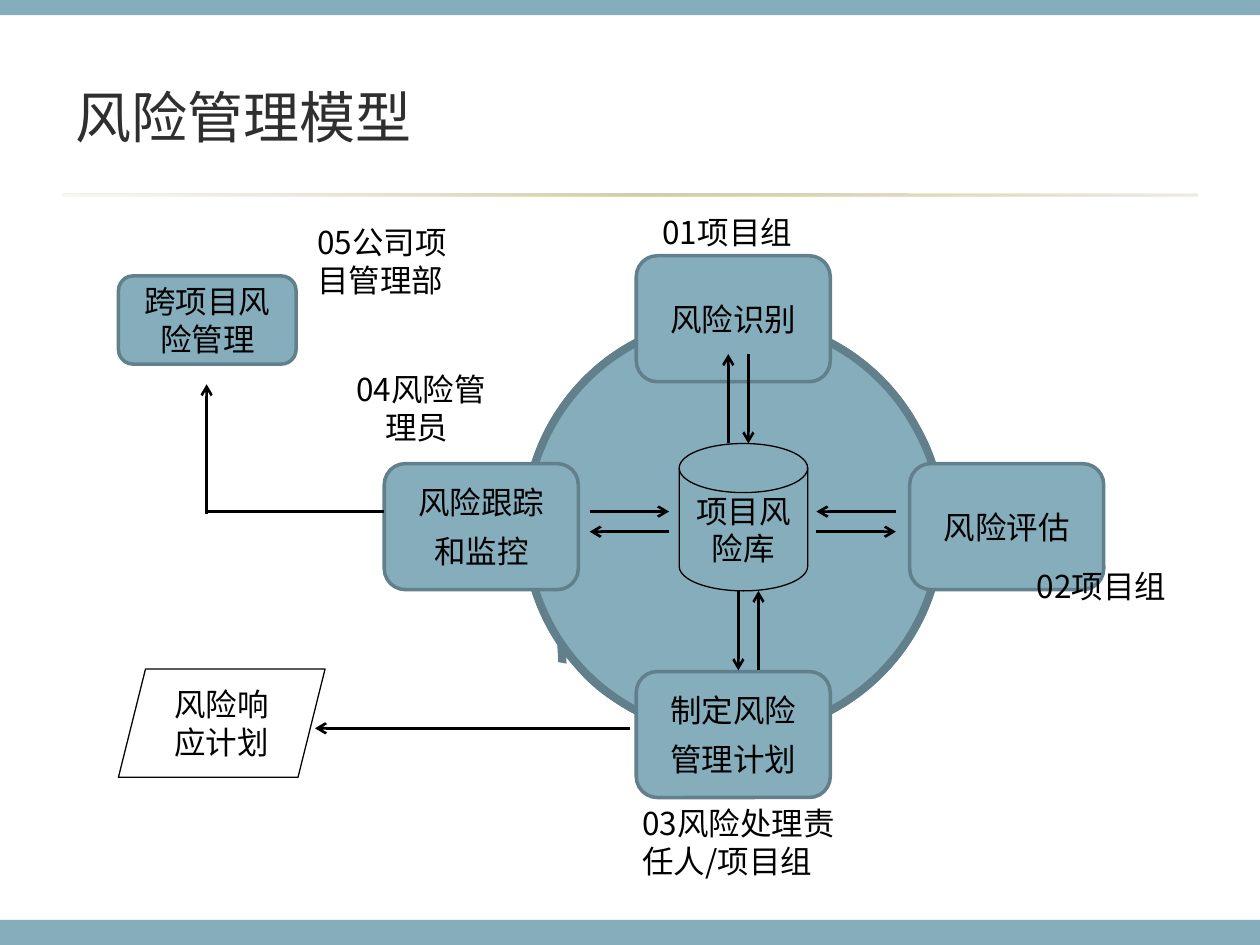
from dataclasses import dataclass

from lxml import etree
from pptx import Presentation
from pptx.dml.color import RGBColor
from pptx.enum.shapes import MSO_CONNECTOR, MSO_SHAPE
from pptx.enum.text import MSO_ANCHOR, MSO_AUTO_SIZE, PP_ALIGN
from pptx.oxml import parse_xml
from pptx.oxml.ns import nsdecls, qn
from pptx.util import Inches, Pt

RECT, ROUND, ARC = MSO_SHAPE.RECTANGLE, MSO_SHAPE.ROUNDED_RECTANGLE, MSO_SHAPE.ARC
DISK, SLANT = MSO_SHAPE.FLOWCHART_MAGNETIC_DISK, MSO_SHAPE.PARALLELOGRAM
STRAIGHT = MSO_CONNECTOR.STRAIGHT
MIDDLE, TOP = MSO_ANCHOR.MIDDLE, MSO_ANCHOR.TOP
LEFT, CENTER = PP_ALIGN.LEFT, PP_ALIGN.CENTER
GROW, FIXED = MSO_AUTO_SIZE.SHAPE_TO_FIT_TEXT, MSO_AUTO_SIZE.NONE

COLORS = {"teal": "85ADBC", "edge": "62808B", "ink": "000000", "title": "2F2F2F"}
SANS, LATIN = "Noto Sans CJK SC", "Roboto"
INSETS = ("margin_left", "margin_top", "margin_right", "margin_bottom")
TIGHT = {name: Inches(0.07) for name in INSETS}


@dataclass
class Node:
    kind: int
    box: tuple
    text: str
    fill: str | None = "teal"
    edge: str = "edge"
    width: float = 2
    font: str = SANS


@dataclass
class Label:
    box: tuple
    text: str
    indent: float = 0  # left indent of the last paragraph


@dataclass
class Arrow:
    start: tuple
    end: tuple
    head: bool = True


def color(name: str) -> RGBColor:
    return RGBColor.from_string(COLORS[name])


def add_head(item) -> None:
    line = item.element.spPr.find(qn("a:ln"))
    etree.SubElement(line, qn("a:tailEnd"), type="arrow")


def write(frame, text: str, font: str = SANS, size: float = 18, ink: str = "ink",
          align=LEFT, after: float = 0, **style) -> None:
    for name, value in {"word_wrap": True, **style}.items():
        setattr(frame, name, value)
    frame.text = text
    for para in frame.paragraphs:
        para.alignment = align
        if after:
            para.space_after = Pt(after)
        run = para.runs[0]
        for name, value in {"name": font, "size": Pt(size)}.items():
            setattr(run.font, name, value)
        run.font.color.rgb = color(ink)
        etree.SubElement(run.font._element, qn("a:ea"), typeface=SANS)


def add_shape(slide, kind, box: tuple, fill: str | None = "teal",
              edge: str | None = None, width: float = 0):
    shape = slide.shapes.add_shape(kind, *map(Inches, box))
    shape.shadow.inherit = False
    if fill:
        shape.fill.solid()
        shape.fill.fore_color.rgb = color(fill)
    else:
        shape.fill.background()
    if edge:
        shape.line.color.rgb = color(edge)
        shape.line.width = Pt(width)
    else:
        shape.line.fill.background()
    return shape


def add_node(slide, node: Node) -> None:
    shape = add_shape(slide, node.kind, node.box, node.fill, node.edge, node.width)
    style = {"vertical_anchor": MIDDLE}
    if node.font == LATIN:
        style |= {"after": 6.3, **TIGHT}
    write(shape.text_frame, node.text, node.font, align=CENTER, **style)


def add_wedge(slide, box: tuple, start: float, end: float) -> None:
    shape = add_shape(slide, ARC, box, "teal", "edge", 4.5)
    for i, angle in enumerate((start, end)):
        shape.adjustments[i] = angle * 0.6 ** -1  # 60000 units a degree
    add_head(shape)


def add_label(slide, label: Label) -> None:
    frame = slide.shapes.add_textbox(*map(Inches, label.box)).text_frame
    write(frame, label.text, auto_size=GROW, vertical_anchor=TOP)
    if label.indent:
        props = frame.paragraphs[-1]._p.get_or_add_pPr()
        props.set("marL", str(Inches(label.indent)))


def add_arrow(slide, arrow: Arrow) -> None:
    line = slide.shapes.add_connector(
        STRAIGHT, *map(Inches, (*arrow.start, *arrow.end)))
    line.line.color.rgb = color("ink")
    line.line.width = Pt(1.5)
    etree.SubElement(line.element.spPr, qn("a:effectLst"))
    if arrow.head:
        add_head(line)


def add_rule(slide, box: tuple, stops: list) -> None:
    rule = add_shape(slide, RECT, box)
    marks = "".join(
        f'<a:gs pos="{pos * 1000}"><a:srgbClr val="{tint}">'
        f'<a:alpha val="{alpha * 1000}"/></a:srgbClr></a:gs>'
        for pos, tint, alpha in stops)
    props = rule.element.spPr
    props.replace(props.find(qn("a:solidFill")), parse_xml(
        f'<a:gradFill {nsdecls("a")}><a:gsLst>{marks}</a:gsLst>'
        '<a:lin ang="0" scaled="0"/></a:gradFill>'))


# Stages around the wheel
WIDE, HIGH = 1.54, 1
STAGES = [(5.05, 2.03, "风险识别"), (7.22, 3.68, "风险评估"),
          (5.05, 5.33, "制定风险\n管理计划"), (3.05, 3.68, "风险跟踪\n和监控")]
WHEEL = (4.17, 2.53, 3.3, 3.3)
WEDGES = [(306.7, 333.45), (26.55, 53.3), (126.7, 153.45), (206.55, 233.3)]

NODES = [Node(ROUND, (x, y, WIDE, HIGH), text, font=LATIN) for x, y, text in STAGES]
NODES += [
    Node(DISK, (5.39, 3.52, 1.02, 1.17), "项目风险库", None, "ink", 0.75),
    Node(ROUND, (0.94, 2.19, 1.41, 0.7), "跨项目风险管理"),
    Node(SLANT, (0.94, 5.31, 1.64, 0.86), "风险响应计划", None, "ink", 0.75),
]
LABELS = [
    Label((5.16, 1.64, 1.41, 0.4), "01项目组"),
    Label((8.13, 4.45, 1.41, 0.4), "02项目组"),
    Label((5, 6.33, 1.88, 0.71), "03风险处理责任人/项目组"),
    Label((2.73, 2.89, 1.41, 0.71), "04风险管\n理员", 0.23),
    Label((2.42, 1.72, 1.33, 0.71), "05公司项目管理部"),
]
ARROWS = [
    Arrow((3.05, 4.06), (1.64, 4.06), False),
    Arrow((1.64, 4.08), (1.64, 3.05)),
    Arrow((5, 5.78), (2.5, 5.78)),
]
# Two-way pairs: vertical (up x, down x, top, bottom), horizontal (left y, right y, ends)
for up, down, top, foot in [(5.78, 5.94, 2.81, 3.52), (6.02, 5.86, 4.69, 5.32)]:
    ARROWS += [Arrow((up, foot), (up, top)), Arrow((down, top), (down, foot))]
for back, forth, near, far in [(4.22, 4.06, 4.68, 5.31), (4.06, 4.22, 6.48, 7.11)]:
    ARROWS += [Arrow((far, back), (near, back)), Arrow((near, forth), (far, forth))]


def main() -> None:
    deck = Presentation()
    deck.slide_width, deck.slide_height = Inches(10), Inches(7.5)
    slide = deck.slides.add_slide(deck.slide_layouts[5])

    # Title
    title = slide.shapes.title
    frame = {"left": 0.5, "top": 0.3, "width": 9, "height": 1.25}
    for name, value in frame.items():
        setattr(title, name, Inches(value))
    write(title.text_frame, "风险管理模型", size=32, ink="title",
          vertical_anchor=MIDDLE, auto_size=FIXED)

    # Page bands and rule
    for box in [(0, 7.3, 10, 0.2), (0, 0, 10, 0.12)]:
        add_shape(slide, RECT, box)
    add_rule(slide, (0.5, 1.54, 9, 0.02),
             [(0, "DCD9CC", 20), (50, "918415", 40), (100, "DCD9CC", 50)])

    # Diagram
    for start, end in WEDGES:
        add_wedge(slide, WHEEL, start, end)
    for node in NODES:
        add_node(slide, node)
    for arrow in ARROWS:
        add_arrow(slide, arrow)
    for label in LABELS:
        add_label(slide, label)

    deck.save("out.pptx")


if __name__ == "__main__":
    main()
